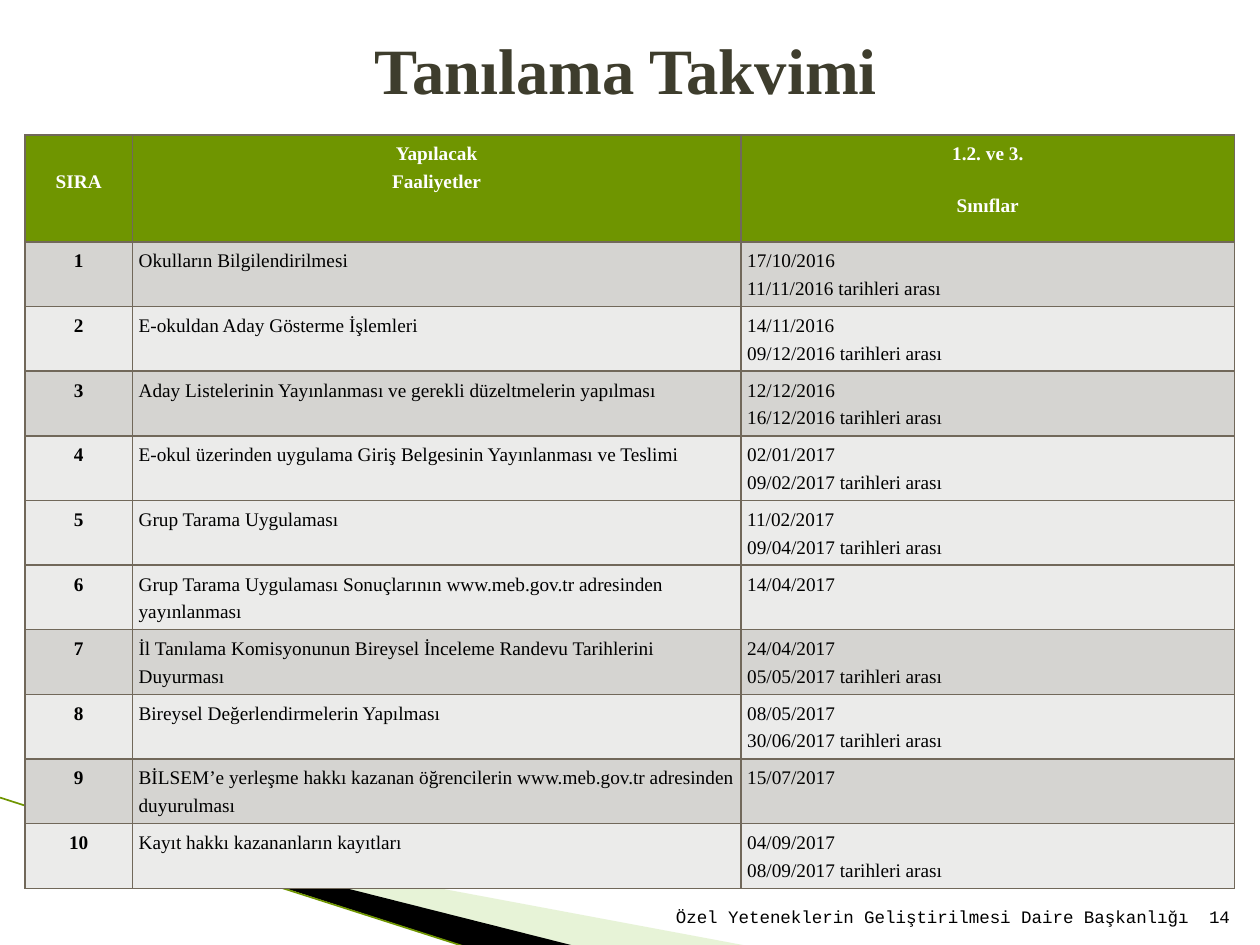
from dataclasses import dataclass

from lxml import etree
from pptx import Presentation
from pptx.dml.color import RGBColor
from pptx.enum.shapes import MSO_CONNECTOR
from pptx.enum.text import MSO_ANCHOR, PP_ALIGN
from pptx.oxml.ns import qn
from pptx.util import Inches, Pt

LEFT, MID, RIGHT = PP_ALIGN.LEFT, PP_ALIGN.CENTER, PP_ALIGN.RIGHT
CENTER, BOTTOM = MSO_ANCHOR.MIDDLE, MSO_ANCHOR.BOTTOM
STRAIGHT = MSO_CONNECTOR.STRAIGHT
UNIT = Inches(0.1)  # the grid has 100 columns and 75 rows


@dataclass(frozen=True)
class Theme:
    serif: str = "Times New Roman"
    mono: str = "Courier New"
    green: str = "6F9500"
    pale: str = "C3E19D"
    ink: str = "000000"
    white: str = "FFFFFF"
    title: str = "3E3D2D"
    border: str = "71685A"
    dark: str = "D5D4D1"
    light: str = "EBEBEA"
    head_size: float = 36.9
    cell_size: float = 11
    foot_size: float = 10


HEADS = ["SIRA", "Yapılacak\nFaaliyetler", "1.2. ve 3.\nSınıflar"]
TASKS = [
    ("Okulların Bilgilendirilmesi", "17/10/2016\n11/11/2016 tarihleri arası"),
    ("E-okuldan Aday Gösterme İşlemleri", "14/11/2016\n09/12/2016 tarihleri arası"),
    ("Aday Listelerinin Yayınlanması ve gerekli düzeltmelerin yapılması",
     "12/12/2016\n16/12/2016 tarihleri arası"),
    ("E-okul üzerinden uygulama Giriş Belgesinin Yayınlanması ve Teslimi",
     "02/01/2017\n09/02/2017 tarihleri arası"),
    ("Grup Tarama Uygulaması", "11/02/2017\n09/04/2017 tarihleri arası"),
    ("Grup Tarama Uygulaması Sonuçlarının www.meb.gov.tr adresinden yayınlanması",
     "14/04/2017"),
    ("İl Tanılama Komisyonunun Bireysel İnceleme Randevu Tarihlerini Duyurması",
     "24/04/2017\n05/05/2017 tarihleri arası"),
    ("Bireysel Değerlendirmelerin Yapılması", "08/05/2017\n30/06/2017 tarihleri arası"),
    ("BİLSEM’e yerleşme hakkı kazanan öğrencilerin www.meb.gov.tr adresinden duyurulması",
     "15/07/2017"),
    ("Kayıt hakkı kazananların kayıtları", "04/09/2017\n08/09/2017 tarihleri arası"),
]
DARK_ROWS = {1, 3, 7, 9}


def grid(*nums):
    return [round(n * UNIT) for n in nums]


def paint(obj, color):
    obj.fill.solid()
    obj.fill.fore_color.rgb = RGBColor.from_string(color)


class Page:
    def __init__(self, deck, theme):
        self.theme = theme
        self.slide = deck.slides.add_slide(deck.slide_layouts[5])
        self.shapes = self.slide.shapes

    def style(self, frame, font, size, color, align, bold=False):
        for para in frame.paragraphs:
            para.alignment = align
            for run in para.runs:
                run.font.name, run.font.size, run.font.bold = font, Pt(size), bold
                run.font.color.rgb = RGBColor.from_string(color)

    def title(self, text, *box):
        shape = self.shapes.title
        shape.left, shape.top, shape.width, shape.height = grid(*box)
        frame = shape.text_frame
        frame.text = text
        frame.vertical_anchor = CENTER
        self.style(frame, self.theme.serif, self.theme.head_size,
                   self.theme.title, MID, True)

    def label(self, text, *box):
        frame = self.shapes.add_textbox(*grid(*box)).text_frame
        frame.word_wrap = True
        frame.text = text
        frame.vertical_anchor = BOTTOM
        self.style(frame, self.theme.mono, self.theme.foot_size, self.theme.ink, RIGHT)

    def wedge(self, color, points, alpha=None):
        start, *rest = points
        path = self.shapes.build_freeform(*grid(*start))
        path.add_line_segments([grid(*p) for p in rest])
        shape = path.convert_to_shape()
        shape.shadow.inherit = False
        shape.line.fill.background()
        paint(shape, color)
        if alpha:
            tone = shape.fill._xPr.find(".//" + qn("a:srgbClr"))
            etree.SubElement(tone, qn("a:alpha"), val=str(alpha * 1000))

    def line(self, color, width, *ends):
        link = self.shapes.add_connector(STRAIGHT, *grid(*ends))
        link.line.color.rgb = RGBColor.from_string(color)
        link.line.width = Pt(width)
        etree.SubElement(link._element.spPr, qn("a:effectLst"))

    def edge(self, cell):
        """Draw a thin line on all four sides of a cell."""
        props = cell._tc.get_or_add_tcPr()
        for spot, side in enumerate(("lnL", "lnR", "lnT", "lnB")):
            line = etree.Element(qn("a:" + side), w=str(Pt(1)))
            fill = etree.SubElement(line, qn("a:solidFill"))
            etree.SubElement(fill, qn("a:srgbClr"), val=self.theme.border)
            props.insert(spot, line)

    def cell(self, cell, text, fill, color, align, bold):
        cell.margin_left = cell.margin_right = Inches(0.05)
        cell.margin_top = cell.margin_bottom = Inches(0.02)
        cell.text_frame.text = text
        self.style(cell.text_frame, self.theme.serif, self.theme.cell_size,
                   color, align, bold)
        for para in cell.text_frame.paragraphs:
            para.line_spacing = 1.29
        paint(cell, fill)
        self.edge(cell)

    def table(self, heads, rows, left, top, cols, head, row):
        look = self.theme
        high = head + row * len(rows)
        table = self.shapes.add_table(len(rows) + 1, len(cols),
                                      *grid(left, top, sum(cols), high)).table
        for col, wide in zip(table.columns, grid(*cols)):
            col.width = wide
        for line, tall in zip(table.rows, grid(head, *[row] * len(rows))):
            line.height = tall
        for c, text in enumerate(heads):
            self.cell(table.cell(0, c), text, look.green, look.white, MID, True)
        for r, texts in enumerate(rows, 1):
            fill = look.dark if r in DARK_ROWS else look.light
            for c, text in enumerate((str(r), *texts)):
                self.cell(table.cell(r, c), text, fill, look.ink,
                          LEFT if c else MID, c == 0)
        return table


def main():
    deck = Presentation()
    deck.slide_width, deck.slide_height = grid(100, 75)
    theme = Theme()
    page = Page(deck, theme)
    page.wedge(theme.pale, [(5.5, 65), (59.5, 75.1), (45.6, 75.1)], 40)
    page.wedge(theme.ink, [(5.3, 64.9), (45.7, 75.1), (37.2, 75.2)])
    page.line(theme.green, 0.95, 0, 63.3, 37.1, 75.2)
    page.label("Özel Yeteneklerin Geliştirilmesi Daire Başkanlığı", 47.9, 71.1, 47.4, 3)
    page.label("14", 94.6, 70.1, 4, 4)
    page.title("Tanılama Takvimi", 4.7, 2.3, 90, 6.3)
    table = page.table(HEADS, TASKS, 2, 10.7, (8.5, 48.3, 39.2), 8.5, 4.98)
    table.cell(0, 0).margin_top = Inches(0.24)
    table.cell(0, 2).text_frame.paragraphs[0].space_after = Pt(14)
    deck.save("out.pptx")


if __name__ == "__main__":
    main()
